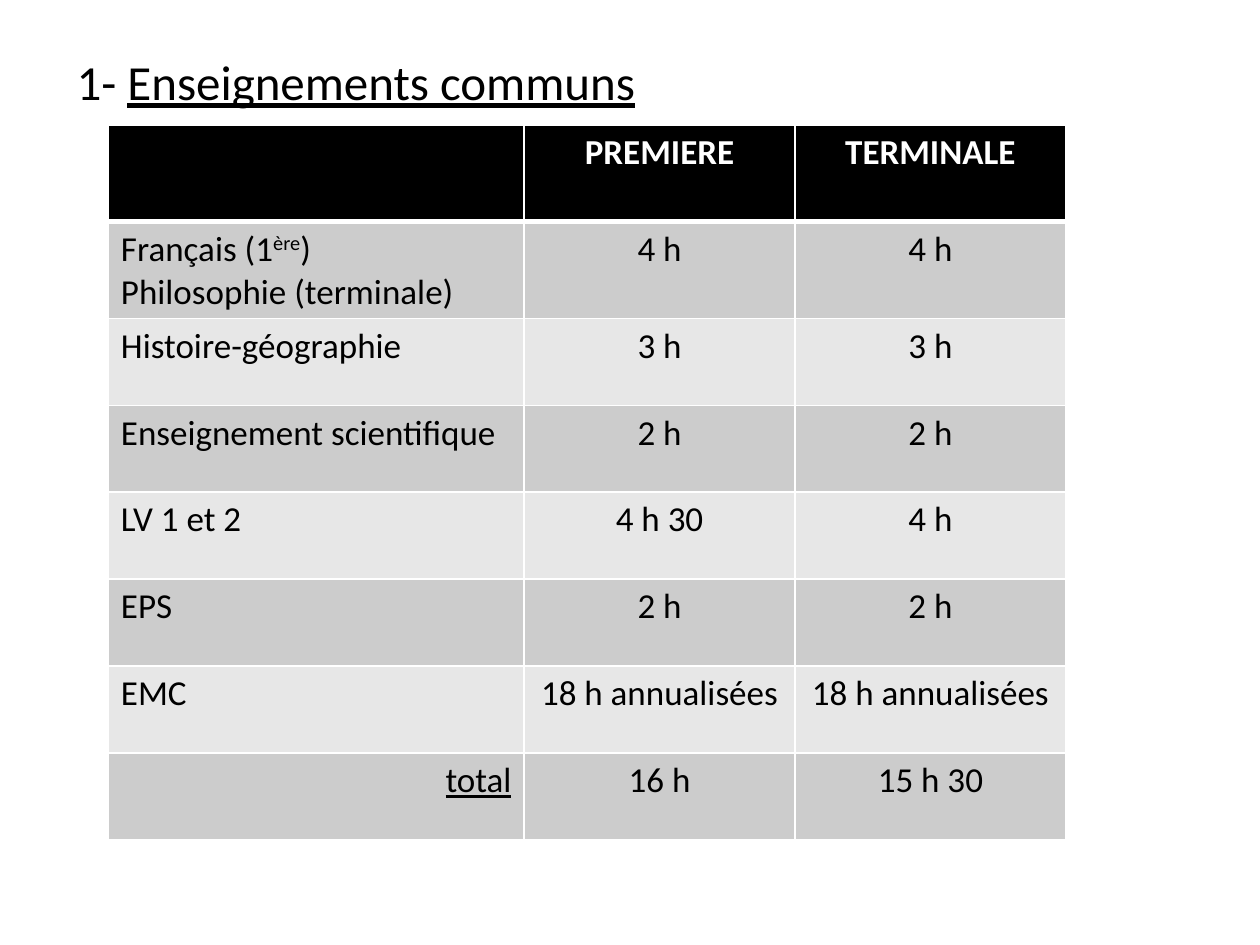
from dataclasses import dataclass

from lxml.etree import SubElement
from pptx import Presentation
from pptx.dml.color import RGBColor
from pptx.enum.text import MSO_AUTO_SIZE, PP_ALIGN as Align
from pptx.oxml.ns import qn
from pptx.util import Inches, Pt


@dataclass(frozen=True)
class Theme:
    font: str = "Calibri"
    title_size: int = 28
    table_size: int = 20
    text: str = "000000"
    header_text: str = "FFFFFF"
    header_fill: str = "000000"
    bands: tuple = ("CCCCCC", "E7E7E7")
    border: str = "FFFFFF"
    thin: int = 1
    thick: int = 3


THEME = Theme()
COLUMN_WIDTHS = (3.3, 2.15, 2.15)
HEADER_HEIGHT, ROW_HEIGHT = 0.77, 0.69
HOURS = (
    ("", "PREMIERE", "TERMINALE"),
    ("Français (1ère)\nPhilosophie (terminale)", "4 h", "4 h"),
    ("Histoire-géographie", "3 h", "3 h"),
    ("Enseignement scientifique", "2 h", "2 h"),
    ("LV 1 et 2", "4 h 30", "4 h"),
    ("EPS", "2 h", "2 h"),
    ("EMC", "18 h annualisées", "18 h annualisées"),
    ("total", "16 h", "15 h 30"),
)


def style_font(font, size, color, bold=False):
    font.name = THEME.font
    font.size = Pt(size)
    font.bold = bold
    font.color.rgb = RGBColor.from_string(color)


def add_spans(para, *texts):
    """Fill an empty paragraph with one run per text and return the runs."""
    spans = []
    for text in texts:
        span = para.add_run()
        span.text = text
        spans.append(span)
    return spans


def add_title(slide, box):
    frame = slide.shapes.add_textbox(*map(Inches, box)).text_frame
    frame.word_wrap = True
    frame.auto_size = MSO_AUTO_SIZE.SHAPE_TO_FIT_TEXT
    number, heading = add_spans(frame.paragraphs[0], "1- ", "Enseignements communs")
    for span in (number, heading):
        style_font(span.font, THEME.title_size, THEME.text)
    heading.font.underline = True


def set_borders(cell, top, bottom):
    """Draw all four sides; must run before the cell gets its fill."""
    properties = cell._tc.get_or_add_tcPr()
    sides = (("L", THEME.thin), ("R", THEME.thin), ("T", top), ("B", bottom))
    for side, width in sides:
        line = SubElement(properties, qn(f"a:ln{side}"), w=str(Pt(width)))
        fill = SubElement(line, qn("a:solidFill"))
        SubElement(fill, qn("a:srgbClr"), val=THEME.border)


def style_cell(cell, row, column):
    is_header = row == 0
    set_borders(cell,
                top=THEME.thick if row == 1 else THEME.thin,
                bottom=THEME.thick if is_header else THEME.thin)
    fill = THEME.header_fill if is_header else THEME.bands[(row - 1) % 2]
    cell.fill.solid()
    cell.fill.fore_color.rgb = RGBColor.from_string(fill)
    color = THEME.header_text if is_header else THEME.text
    for para in cell.text_frame.paragraphs:
        para.alignment = Align.CENTER if column else Align.LEFT
        style_font(para.font, THEME.table_size, color, is_header)
        for span in para.runs:
            style_font(span.font, THEME.table_size, color, is_header)


def add_hours_table(slide, box):
    table = slide.shapes.add_table(
        len(HOURS), len(COLUMN_WIDTHS), *map(Inches, box)).table
    for column, width in zip(table.columns, COLUMN_WIDTHS):
        column.width = Inches(width)
    for row, texts in enumerate(HOURS):
        table.rows[row].height = Inches(ROW_HEIGHT if row else HEADER_HEIGHT)
        for column, text in enumerate(texts):
            cell = table.cell(row, column)
            cell.text_frame.text = text
            if (row, column) == (1, 0):
                first = cell.text_frame.paragraphs[0]
                first.clear()
                ordinal = add_spans(first, "Français (1", "ère", ")")[1]
                ordinal.font._element.set("baseline", "30000")
            style_cell(cell, row, column)

    total = table.cell(len(HOURS) - 1, 0).text_frame.paragraphs[0]
    total.alignment = Align.RIGHT
    total.runs[0].font.underline = True


def main():
    deck = Presentation()
    deck.slide_width, deck.slide_height = Inches(10), Inches(7.5)
    slide = deck.slides.add_slide(deck.slide_layouts[6])
    add_title(slide, (0.51, 0.36, 9.21, 0.57))
    add_hours_table(slide, (0.86, 0.99, 7.6, 5.71))
    deck.save("out.pptx")


if __name__ == "__main__":
    main()
